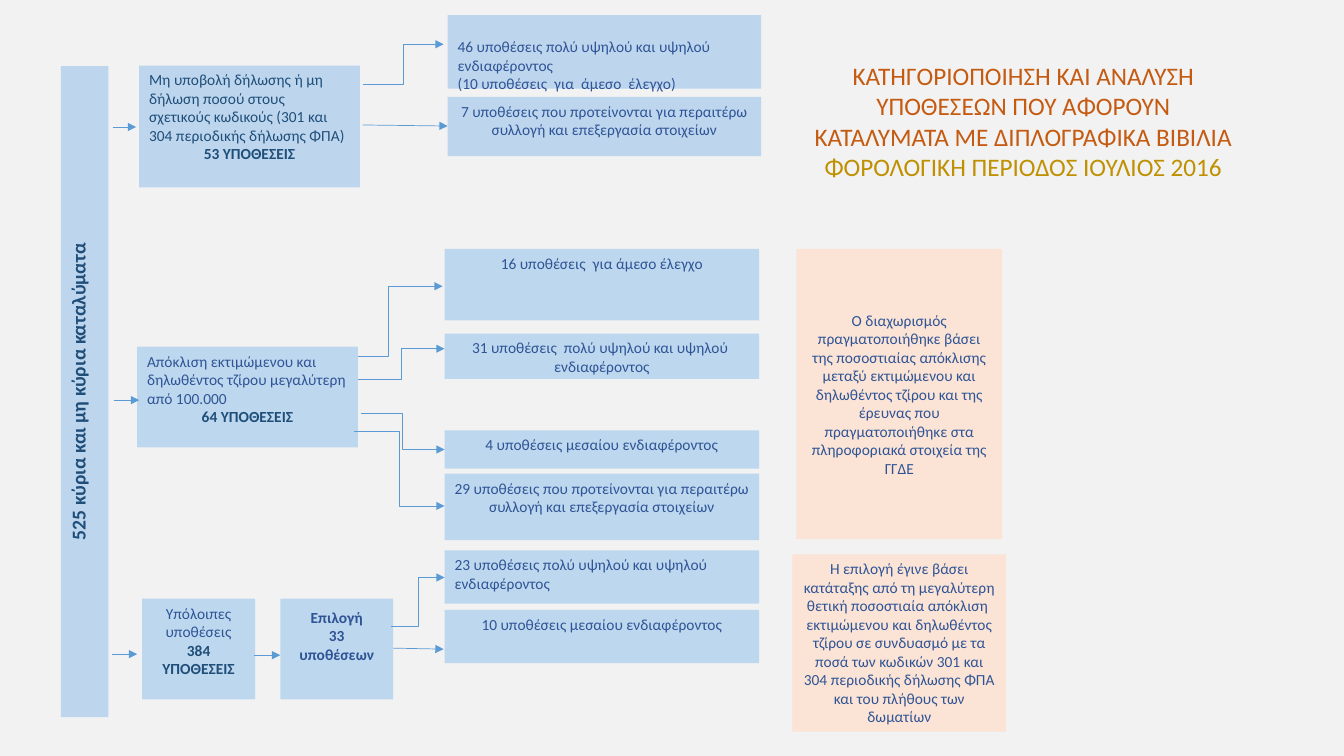
"""Builds a slide that sorts lodging tax cases into groups with arrows."""
from dataclasses import dataclass

from lxml import etree
from pptx import Presentation
from pptx.dml.color import RGBColor
from pptx.enum.shapes import MSO_CONNECTOR, MSO_SHAPE
from pptx.enum.text import MSO_ANCHOR, PP_ALIGN
from pptx.oxml.ns import qn
from pptx.util import Inches, Pt

RECTANGLE = MSO_SHAPE.RECTANGLE
STRAIGHT, ELBOW = MSO_CONNECTOR.STRAIGHT, MSO_CONNECTOR.ELBOW
TOP, MIDDLE = MSO_ANCHOR.TOP, MSO_ANCHOR.MIDDLE
LEFT, CENTER = PP_ALIGN.LEFT, PP_ALIGN.CENTER

PAGE_GREY = RGBColor(0xF2, 0xF2, 0xF2)
PALE_BLUE = RGBColor(0xBD, 0xD6, 0xEE)
LIGHT_BLUE = RGBColor(0xBD, 0xD7, 0xEE)
PEACH = RGBColor(0xFB, 0xE4, 0xD5)
NAVY = RGBColor(0x1F, 0x4E, 0x79)
BLUE = RGBColor(0x2F, 0x54, 0x96)
ARROW_BLUE = RGBColor(0x5B, 0x9B, 0xD5)
ORANGE = RGBColor(0xC5, 0x5A, 0x11)
GOLD = RGBColor(0xBF, 0x90, 0x00)

FONT = "Calibri"
RESULT_LEFT, RESULT_WIDTH = 4.41, 3.12
FIRST_LEFT, FIRST_WIDTH = 4.44, 3.11


@dataclass
class Line:
    text: str
    color: RGBColor = BLUE
    bold: bool = False
    align: PP_ALIGN = CENTER
    size: float = 11


@dataclass
class Box:
    left: float
    top: float
    width: float
    height: float
    lines: list[Line]
    fill: RGBColor | None = LIGHT_BLUE
    anchor: MSO_ANCHOR = TOP
    margin_top: float = 0.05
    rotation: float = 0


@dataclass
class Arrow:
    begin: tuple[float, float]
    end: tuple[float, float]
    kind: MSO_CONNECTOR = STRAIGHT
    bend: float = 0.5


TITLE = Box(7.9, 0.55, 4.5, 1.31, [
    Line("ΚΑΤΗΓΟΡΙΟΠΟΙΗΣΗ ΚΑΙ ΑΝΑΛΥΣΗ ΥΠΟΘΕΣΕΩΝ ΠΟΥ ΑΦΟΡΟΥΝ "
         "ΚΑΤΑΛΥΜΑΤΑ ΜΕ ΔΙΠΛΟΓΡΑΦΙΚΑ ΒΙΒΙΛΙΑ", ORANGE, size=18),
    Line("ΦΟΡΟΛΟΓΙΚΗ ΠΕΡΙΟΔΟΣ ΙΟΥΛΙΟΣ 2016", GOLD, size=18)], fill=None)

GROUPS = [
    Box(-2.39, 3.65, 6.46, 0.47,
        [Line("525 κύρια και μη κύρια καταλύματα", NAVY, True, size=14)],
        PALE_BLUE, rotation=270),
    Box(1.38, 0.65, 2.19, 1.21, [
        Line("Μη υποβολή δήλωσης ή μη δήλωση ποσού στους σχετικούς κωδικούς "
             "(301 και 304 περιοδικής δήλωσης ΦΠΑ)", NAVY, align=LEFT),
        Line("53 ΥΠΟΘΕΣΕΙΣ", NAVY, True)], PALE_BLUE),
    Box(1.36, 3.44, 2.19, 1, [
        Line("Απόκλιση εκτιμώμενου και δηλωθέντος τζίρου μεγαλύτερη από 100.000",
             align=LEFT),
        Line("64 ΥΠΟΘΕΣΕΙΣ", NAVY, True)]),
    Box(1.41, 5.94, 1.12, 1, [
        Line("Υπόλοιπες υποθέσεις"), Line("384 ΥΠΟΘΕΣΕΙΣ", NAVY, True)]),
    Box(2.78, 5.94, 1.12, 1,
        [Line(text, bold=True) for text in ("Επιλογή", "33", "υποθέσεων")],
        margin_top=0.09),
]

RESULTS = [
    Box(FIRST_LEFT, 0.15, FIRST_WIDTH, 0.73, [
        Line("46 υποθέσεις πολύ υψηλού και υψηλού  ενδιαφέροντος", align=LEFT),
        Line("(10 υποθέσεις  για  άμεσο  έλεγχο)", align=LEFT)],
        PALE_BLUE, margin_top=0.22),
    Box(FIRST_LEFT, 0.96, FIRST_WIDTH, 0.59, [
        Line("7 υποθέσεις που προτείνονται για περαιτέρω συλλογή και "
             "επεξεργασία στοιχείων")], PALE_BLUE),
    Box(RESULT_LEFT, 2.47, RESULT_WIDTH, 0.71,
        [Line("16 υποθέσεις  για άμεσο έλεγχο")]),
    Box(RESULT_LEFT, 3.31, RESULT_WIDTH, 0.45,
        [Line("31 υποθέσεις  πολύ υψηλού και υψηλού  ενδιαφέροντος")]),
    Box(RESULT_LEFT, 4.27, RESULT_WIDTH, 0.38,
        [Line("4 υποθέσεις μεσαίου ενδιαφέροντος")]),
    Box(RESULT_LEFT, 4.7, RESULT_WIDTH, 0.66, [
        Line("29 υποθέσεις που προτείνονται για περαιτέρω συλλογή και "
             "επεξεργασία στοιχείων")]),
    Box(RESULT_LEFT, 5.46, RESULT_WIDTH, 0.53, [
        Line("23 υποθέσεις πολύ υψηλού και υψηλού  ενδιαφέροντος", align=LEFT)]),
    Box(RESULT_LEFT, 6.05, RESULT_WIDTH, 0.53,
        [Line("10 υποθέσεις μεσαίου ενδιαφέροντος")]),
]

REMARKS = [
    Box(7.9, 2.47, 2.04, 2.88, [
        Line("Ο διαχωρισμός πραγματοποιήθηκε βάσει της ποσοστιαίας απόκλισης "
             "μεταξύ εκτιμώμενου και δηλωθέντος τζίρου και της έρευνας που "
             "πραγματοποιήθηκε στα πληροφοριακά στοιχεία της ΓΓΔΕ")],
        PEACH, MIDDLE),
    Box(7.86, 5.5, 2.12, 1.76, [
        Line("Η επιλογή έγινε βάσει κατάταξης από τη μεγαλύτερη θετική "
             "ποσοστιαία απόκλιση  εκτιμώμενου και δηλωθέντος τζίρου σε "
             "συνδυασμό με τα ποσά των κωδικών 301 και 304 περιοδικής δήλωσης "
             "ΦΠΑ και του πλήθους των δωματίων")], PEACH),
]

ARROWS = [
    Arrow((1.12, 1.26), (1.35, 1.26)),
    Arrow((1.13, 3.97), (1.38, 3.97)),
    Arrow((1.11, 6.49), (1.36, 6.49)),
    Arrow((2.52, 6.5), (2.78, 6.5)),
    Arrow((3.6, 1.24), (4.44, 1.25)),
    Arrow((3.9, 6.43), (4.4, 6.44)),
    Arrow((3.6, 0.84), (4.4, 0.44), ELBOW),
    Arrow((3.55, 3.54), (4.39, 2.84), ELBOW, 0.365),
    Arrow((3.55, 3.76), (4.41, 3.46), ELBOW),
    Arrow((3.58, 4.1), (4.41, 4.46), ELBOW),
    Arrow((3.51, 4.28), (4.41, 5.02), ELBOW),
    Arrow((3.88, 6.21), (4.41, 5.73), ELBOW),
]


def draw_box(page, box: Box) -> None:
    """Draw a filled rectangle, or a plain text box when there is no fill."""
    place = [Inches(n) for n in (box.left, box.top, box.width, box.height)]
    if box.fill is None:
        shape = page.shapes.add_textbox(*place)
    else:
        shape = page.shapes.add_shape(RECTANGLE, *place)
        shape.shadow.inherit = False
        shape.fill.solid()
        shape.fill.fore_color.rgb = box.fill
        shape.line.fill.background()
    shape.rotation = box.rotation
    frame = shape.text_frame
    frame.word_wrap = True
    frame.vertical_anchor = box.anchor
    frame.margin_top = Inches(box.margin_top)
    for index, line in enumerate(box.lines):
        para = frame.add_paragraph() if index else frame.paragraphs[0]
        para.text = line.text
        para.alignment = line.align
        para.font.name = FONT
        para.font.size = Pt(line.size)
        para.font.bold = line.bold
        para.font.color.rgb = line.color


def draw_arrow(page, arrow: Arrow) -> None:
    """Draw a thin connector with a triangle at its end."""
    points = [Inches(n) for n in (*arrow.begin, *arrow.end)]
    connector = page.shapes.add_connector(arrow.kind, *points)
    connector.line.color.rgb = ARROW_BLUE
    connector.line.width = Pt(0.5)
    properties = connector._element.spPr
    etree.SubElement(properties.find(qn("a:ln")), qn("a:tailEnd"), type="triangle")
    etree.SubElement(properties, qn("a:effectLst"))
    if arrow.kind == ELBOW:
        guides = properties.find(qn("a:prstGeom")).find(qn("a:avLst"))
        etree.SubElement(guides, qn("a:gd"), name="adj1",
                         fmla=f"val {round(arrow.bend * 100000)}")


def main() -> None:
    """Build the slide and save it."""
    deck = Presentation()
    deck.slide_width, deck.slide_height = Inches(13.33), Inches(7.5)
    page = deck.slides.add_slide(deck.slide_layouts[6])
    page.background.fill.solid()
    page.background.fill.fore_color.rgb = PAGE_GREY
    for box in [TITLE, *GROUPS, *RESULTS, *REMARKS]:
        draw_box(page, box)
    for arrow in ARROWS:
        draw_arrow(page, arrow)
    deck.save("out.pptx")


if __name__ == "__main__":
    main()
